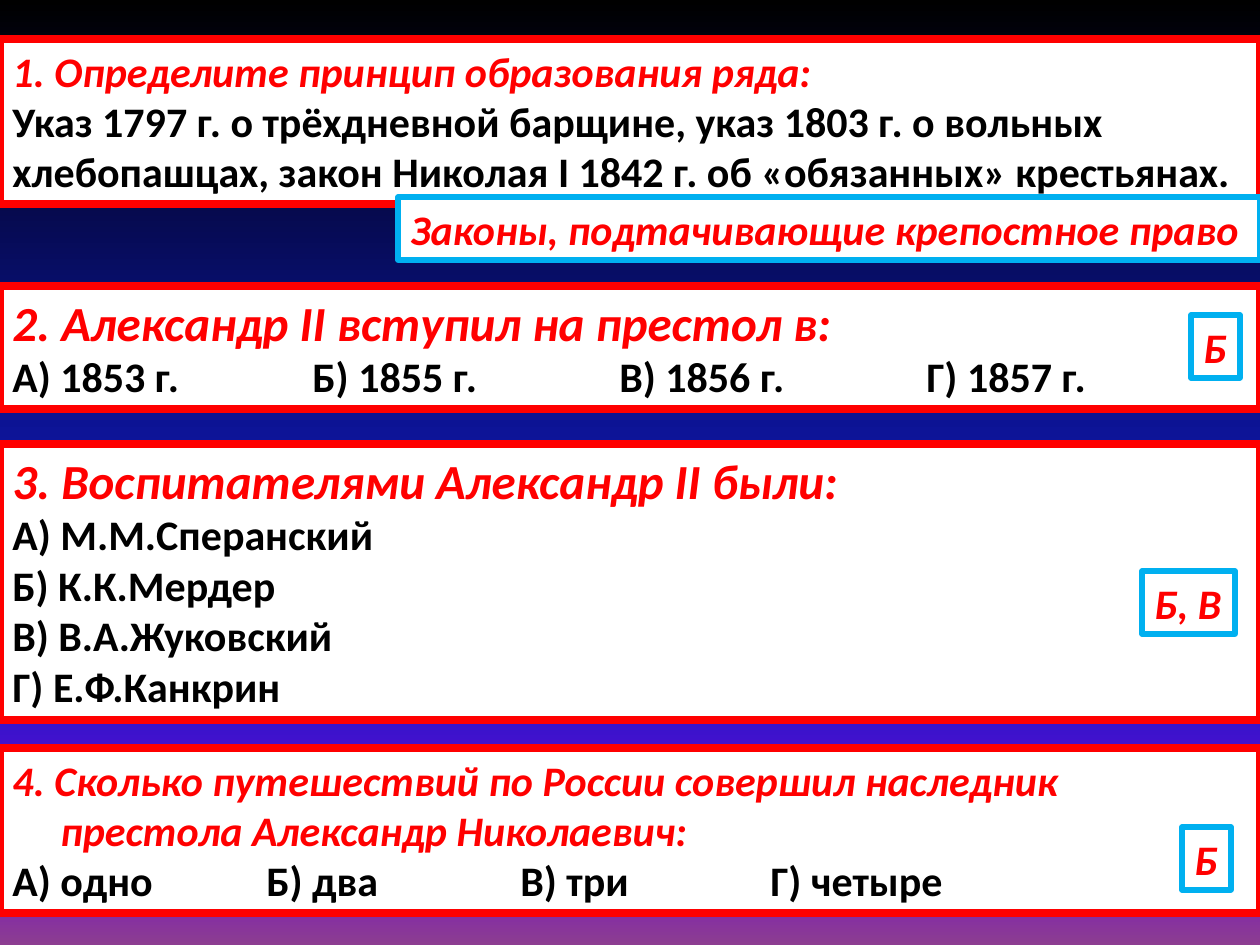
from lxml.etree import SubElement
from pptx import Presentation
from pptx.dml.color import RGBColor
from pptx.enum.text import MSO_AUTO_SIZE
from pptx.oxml.ns import qn
from pptx.util import Emu, Pt

W, H = 1260, 945
EMU_PER_PX = 914400 / 126
HANGING = 48
ANSWER_HEIGHT = 63
COLORS = {"red": "FF0000", "blue": "00B0F0", "white": "FFFFFF", "black": "000000"}
GRADIENT = [(0, "000000"), (40, "0A128C"), (70, "181CC7"), (88, "7005D4"), (100, "8C3D91")]

QUESTIONS = [
    (39, 165, 24, "1. Определите принцип образования ряда:",
     ["Указ 1797 г. о трёхдневной барщине, указ 1803 г. о вольных",
      "хлебопашцах, закон Николая I 1842 г. об «обязанных» крестьянах."], []),
    (286, 123, 28, "2. Александр II вступил на престол в:",
     ["А) 1853 г.\tБ) 1855 г.\tВ) 1856 г.\tГ) 1857 г."], [300, 607, 914]),
    (444, 276, 28, "3. Воспитателями Александр II были:",
     ["А) М.М.Сперанский", "Б) К.К.Мердер", "В) В.А.Жуковский", "Г) Е.Ф.Канкрин"], []),
    (748, 165, 24,
     "4. Сколько путешествий по России совершил наследник престола Александр Николаевич:",
     ["А) одно\tБ) два\tВ) три\tГ) четыре"], [254, 508, 758]),
]
ANSWERS = [
    (398, 197, 862, "Законы, подтачивающие крепостное право"),
    (1191, 315, 49, "Б"),
    (1142, 571, 93, "Б, В"),
    (1182, 827, 49, "Б"),
]


def px(n):
    """Convert pixels to EMU."""
    return Emu(round(n * EMU_PER_PX))


def rgb(name):
    """Look up a named colour."""
    return RGBColor.from_string(COLORS[name])


def set_background(slide):
    """Fill the background with a vertical gradient."""
    fill = slide.background.fill
    fill.gradient()
    fill.gradient_angle = 270
    stops = slide.element.find(".//" + qn("a:gsLst"))
    for gs in list(stops):
        stops.remove(gs)
    for pos, color in GRADIENT:
        gs = SubElement(stops, qn("a:gs"), pos=str(pos * 1000))
        SubElement(gs, qn("a:srgbClr"), val=color)


def add_box(slide, x, y, w, h, border, weight, wrap):
    """Add a white bordered text box and return its text frame."""
    sp = slide.shapes.add_textbox(px(x), px(y), px(w), px(h))
    sp.fill.solid()
    sp.fill.fore_color.rgb = rgb("white")
    sp.line.color.rgb = rgb(border)
    sp.line.width = Pt(weight)
    tf = sp.text_frame
    tf.word_wrap = wrap
    tf.auto_size = MSO_AUTO_SIZE.SHAPE_TO_FIT_TEXT
    return tf


def write(p, text, size, color, italic):
    """Set the text of a paragraph and format its runs."""
    p.text = text
    for r in p.runs:
        r.font.name = "Calibri"
        r.font.size = Pt(size)
        r.font.bold = True
        r.font.italic = italic
        r.font.color.rgb = rgb(color)


def set_tabs(p, tabs):
    """Give a paragraph left tab stops."""
    tab_list = SubElement(p._p.get_or_add_pPr(), qn("a:tabLst"))
    for tab in tabs:
        SubElement(tab_list, qn("a:tab"), pos=str(px(tab)), algn="l")


def add_question(slide, y, h, size, title, lines, tabs):
    """Add a full-width question with its lines of options."""
    tf = add_box(slide, 0, y, W, h, "red", 4.5, True)
    p = tf.paragraphs[0]
    write(p, title, size, "red", True)
    pPr = p._p.get_or_add_pPr()
    pPr.set("marL", str(px(HANGING)))
    pPr.set("indent", str(-px(HANGING)))
    for line in lines:
        p = tf.add_paragraph()
        write(p, line, 24, "black", False)
        if tabs:
            set_tabs(p, tabs)


def add_answer(slide, x, y, w, text):
    """Add a blue-bordered answer."""
    tf = add_box(slide, x, y, w, ANSWER_HEIGHT, "blue", 3, False)
    write(tf.paragraphs[0], text, 24, "red", True)


def main():
    """Build the quiz slide."""
    prs = Presentation()
    prs.slide_width, prs.slide_height = px(W), px(H)
    slide = prs.slides.add_slide(prs.slide_layouts[6])
    set_background(slide)
    for question, answer in zip(QUESTIONS, ANSWERS):
        add_question(slide, *question)
        add_answer(slide, *answer)
    prs.save("out.pptx")


if __name__ == "__main__":
    main()
